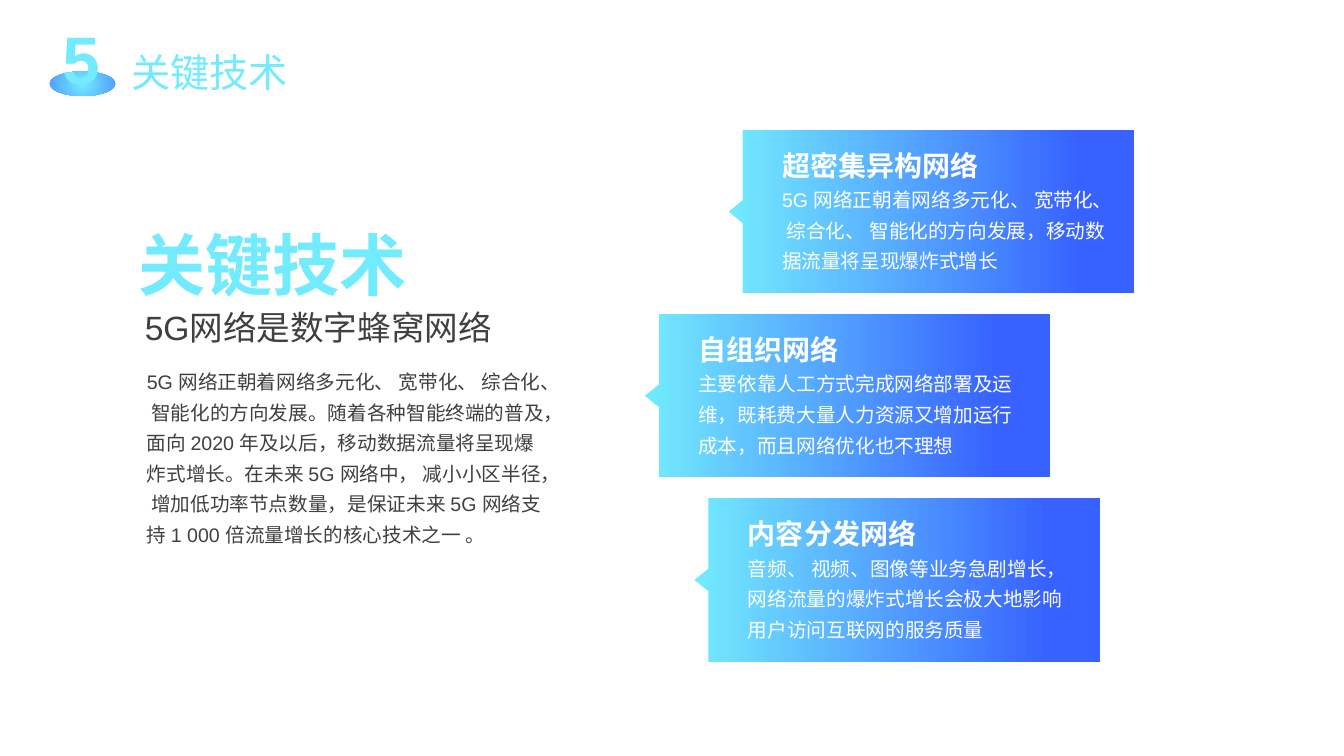
import dataclasses

import lxml.etree
import pptx
import pptx.dml.color
import pptx.enum.shapes
import pptx.enum.text
import pptx.oxml.ns
import pptx.util

Cm = pptx.util.Cm
Align = pptx.enum.text.PP_ALIGN


@dataclasses.dataclass(frozen=True)
class Theme:
    font: str = "Arial"
    cyan: str = "73EBFE"
    sky: str = "519DFF"
    blue: str = "3762FF"
    white: str = "FFFFFF"
    ink: str = "404040"
    display: int = 48
    header: int = 28
    subtitle: int = 24
    card_title: int = 20
    body: int = 14
    body_spacing: float = 1.3


THEME = Theme()

CARD_WIDTH, CARD_HEIGHT = 9.86, 4.11
CARD_TOP, CARD_STEP = 3.28, 4.64
POINTER_WIDTH, POINTER_HALF = 0.36, 0.28

CARDS = [
    (18.72, "超密集异构网络",
     "5G 网络正朝着网络多元化、 宽带化、 综合化、 智能化的方向发展，移动数据流量将呈现爆炸式增长"),
    (16.61, "自组织网络",
     "主要依靠人工方式完成网络部署及运维，既耗费大量人力资源又增加运行成本，而且网络优化也不理想"),
    (17.86, "内容分发网络",
     "音频、 视频、图像等业务急剧增长， 网络流量的爆炸式增长会极大地影响用户访问互联网的服务质量"),
]

INTRODUCTION = (
    "5G 网络正朝着网络多元化、 宽带化、 综合化、 智能化的方向发展。"
    "随着各种智能终端的普及，面向 2020 年及以后，移动数据流量将呈现爆炸式增长。"
    "在未来 5G 网络中， 减小小区半径， 增加低功率节点数量，"
    "是保证未来 5G 网络支持 1 000 倍流量增长的核心技术之一 。"
)


def rgb(color):
    return pptx.dml.color.RGBColor.from_string(color)


def add_text(slide, box, text, size, color, bold=False, align=Align.LEFT, spacing=None):
    shape = slide.shapes.add_textbox(*map(Cm, box))
    frame = shape.text_frame
    frame.word_wrap = True
    frame.auto_size = pptx.enum.text.MSO_AUTO_SIZE.SHAPE_TO_FIT_TEXT
    paragraph = frame.paragraphs[0]
    paragraph.alignment = align
    paragraph.line_spacing = spacing
    run = paragraph.add_run()
    run.text = text
    run.font.name = THEME.font
    run.font.size = pptx.util.Pt(size)
    run.font.bold = bold
    run.font.color.rgb = rgb(color)


def fill_gradient(shape, start, end, end_position=1.0):
    shape.shadow.inherit = False
    shape.line.fill.background()
    shape.fill.gradient()
    shape.fill.gradient_angle = 0
    stops = shape.fill.gradient_stops
    for stop, color, position in zip(stops, (start, end), (0.0, end_position)):
        stop.color.rgb = rgb(color)
        stop.position = position


def make_gradient_radial(shape):
    qn = pptx.oxml.ns.qn
    linear = next(shape.element.spPr.iter(qn("a:lin")))
    radial = lxml.etree.Element(qn("a:path"), path="circle")
    lxml.etree.SubElement(
        radial, qn("a:fillToRect"), {side: "50000" for side in "ltrb"})
    linear.getparent().replace(linear, radial)


def add_header(slide):
    add_text(slide, (2.69, 1.09, 5.18, 1.45), "关键技术",
             THEME.header, THEME.cyan, align=Align.CENTER)
    base = slide.shapes.add_shape(
        pptx.enum.shapes.MSO_SHAPE.OVAL, Cm(1.25), Cm(1.8), Cm(1.66), Cm(0.62))
    fill_gradient(base, THEME.cyan, THEME.sky)
    make_gradient_radial(base)
    add_text(slide, (1.32, 0.3, 1.42, 2.31), "5",
             THEME.display, THEME.cyan, bold=True, align=Align.CENTER)


def add_callout(slide, left, top):
    right, bottom = left + CARD_WIDTH, top + CARD_HEIGHT
    middle = top + CARD_HEIGHT / 2
    outline = [
        (right, top), (right, bottom), (left, bottom),
        (left, middle + POINTER_HALF),
        (left - POINTER_WIDTH, middle),
        (left, middle - POINTER_HALF),
    ]
    builder = slide.shapes.build_freeform(Cm(left), Cm(top))
    builder.add_line_segments([(Cm(x), Cm(y)) for x, y in outline], close=True)
    fill_gradient(builder.convert_to_shape(), THEME.cyan, THEME.blue, 0.87)


def add_card(slide, left, top, title, body):
    add_callout(slide, left, top)
    text_left = left + 0.74
    add_text(slide, (text_left, top + 0.33, 6.6, 1.12), title,
             THEME.card_title, THEME.white, bold=True)
    add_text(slide, (text_left, top + 1.16, 8.76, 2.54), body,
             THEME.body, THEME.white, spacing=THEME.body_spacing)


def add_introduction(slide):
    add_text(slide, (3.45, 9.02, 10.64, 4.88), INTRODUCTION,
             THEME.body, THEME.ink, spacing=THEME.body_spacing)
    add_text(slide, (3.23, 5.51, 10.52, 2.31), "关键技术",
             THEME.display, THEME.cyan, bold=True)
    add_text(slide, (3.4, 7.62, 10.52, 1.27), "5G网络是数字蜂窝网络",
             THEME.subtitle, THEME.ink)


def main():
    presentation = pptx.Presentation()
    presentation.slide_width = Cm(33.87)
    presentation.slide_height = Cm(19.05)
    slide = presentation.slides.add_slide(presentation.slide_layouts[6])
    add_header(slide)
    for index, (left, title, body) in enumerate(CARDS):
        add_card(slide, left, CARD_TOP + index * CARD_STEP, title, body)
    add_introduction(slide)
    presentation.save("out.pptx")


if __name__ == "__main__":
    main()
